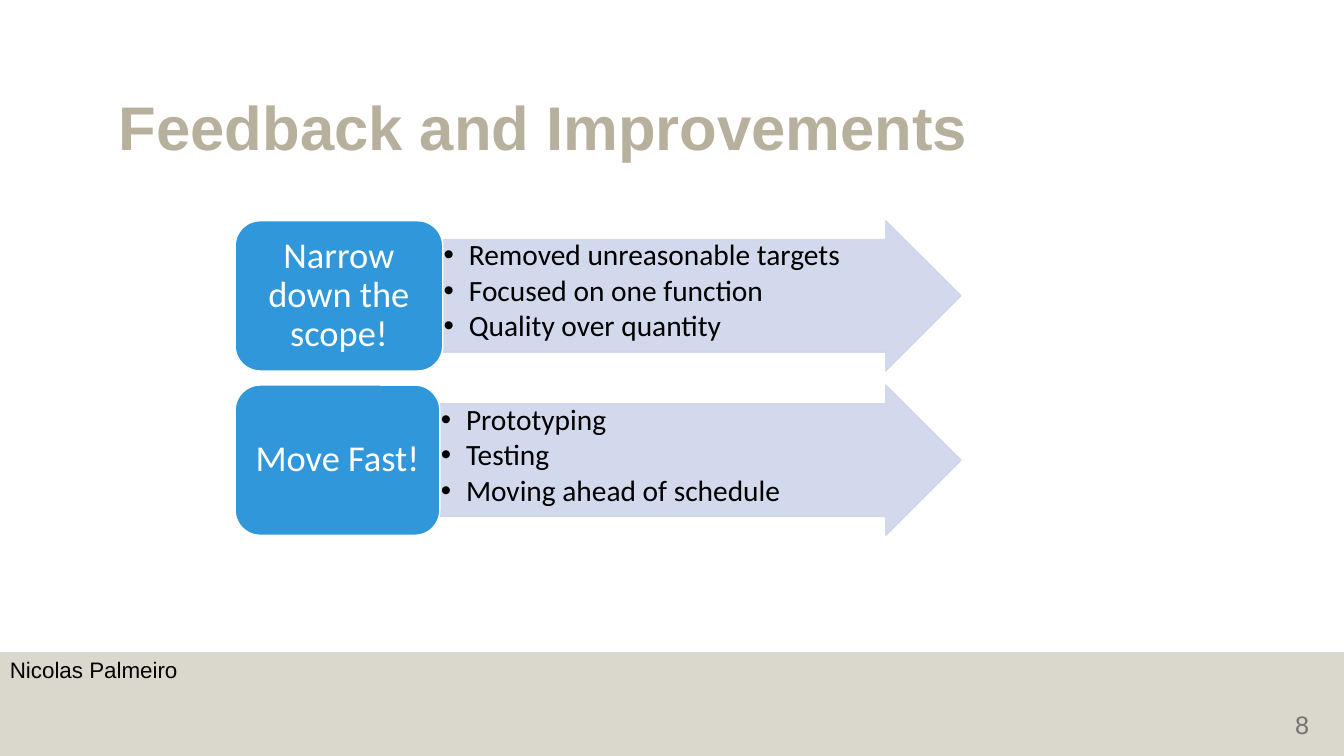
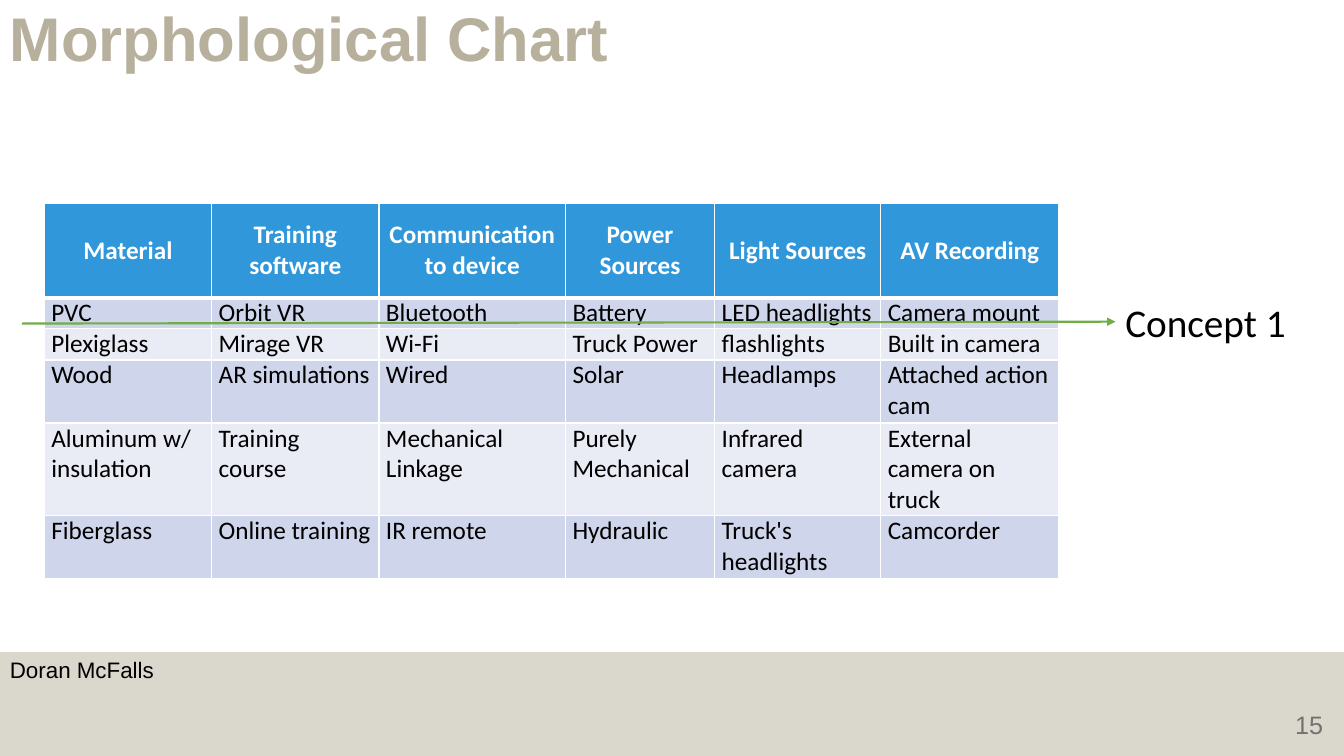
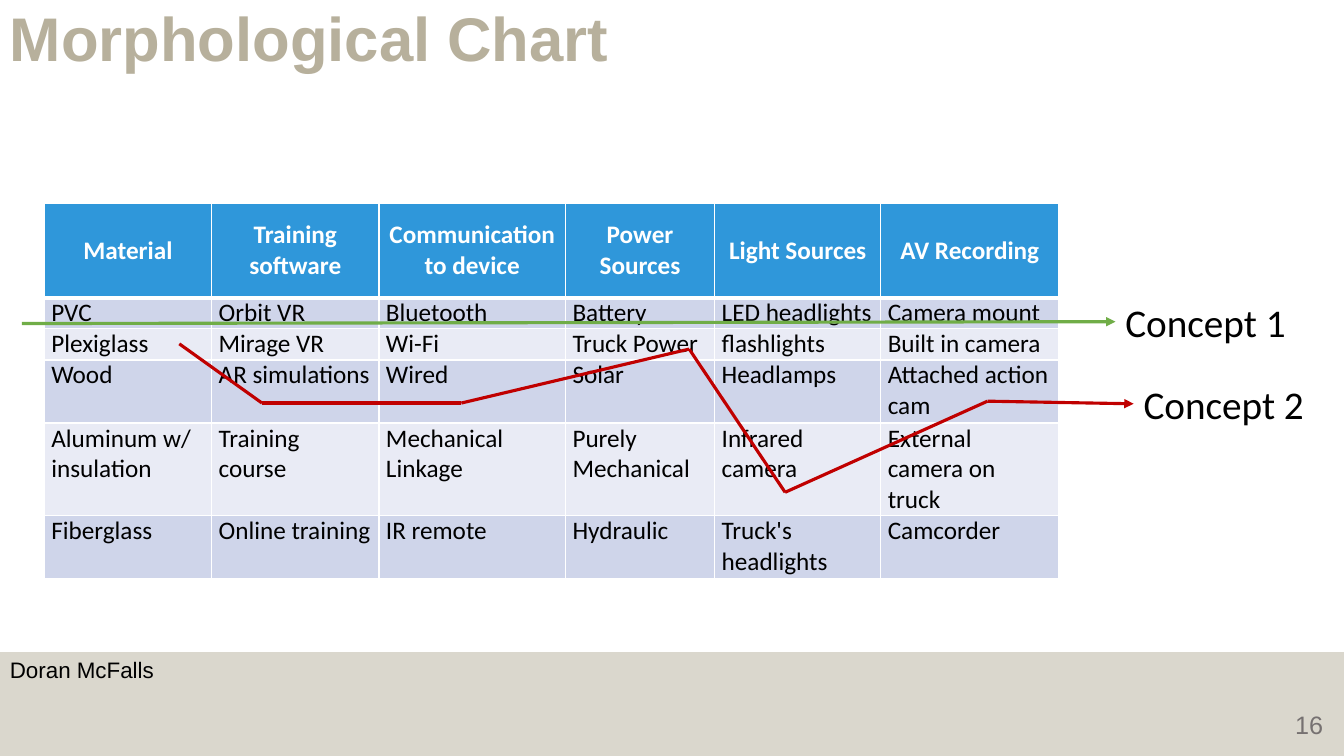
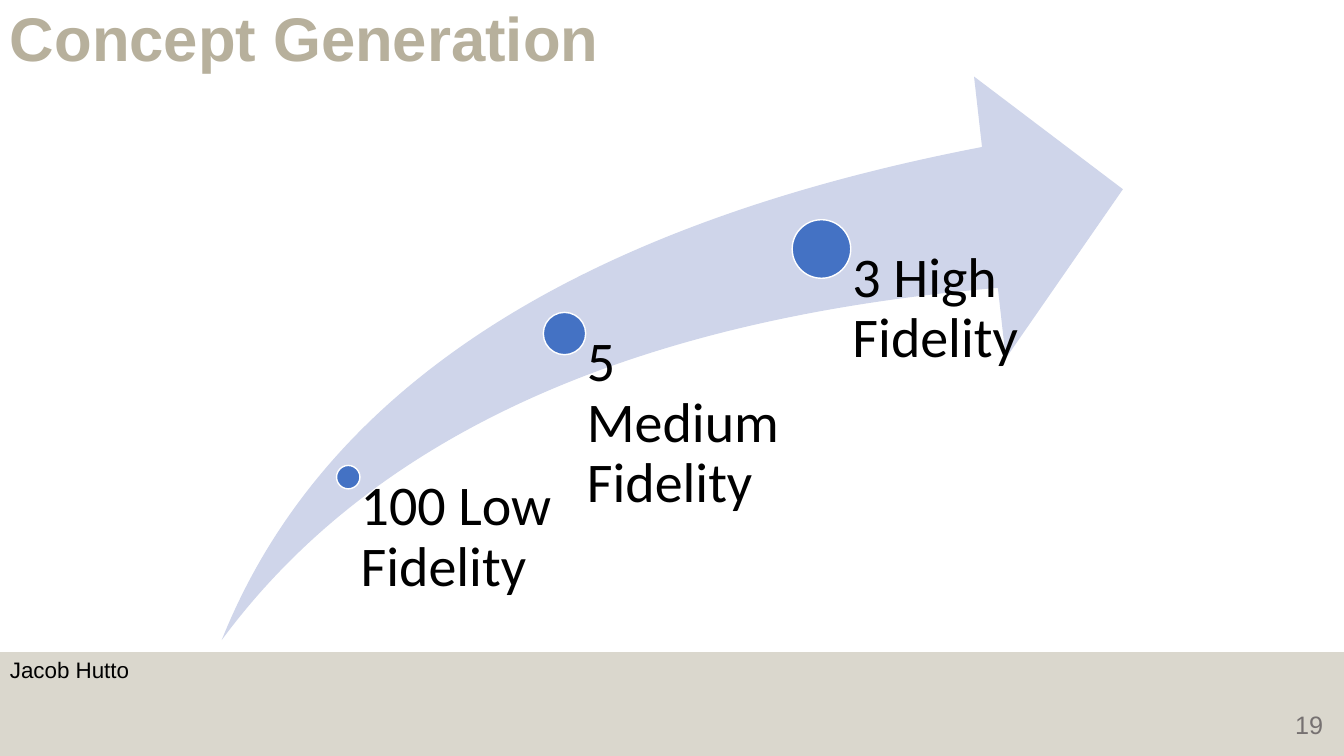
from dataclasses import dataclass

from lxml.etree import SubElement
from pptx import Presentation
from pptx.dml.color import RGBColor
from pptx.enum.shapes import MSO_CONNECTOR as Link, MSO_SHAPE as Form
from pptx.enum.text import MSO_ANCHOR as Anchor, PP_ALIGN as Align
from pptx.oxml.ns import qn
from pptx.util import Inches, Pt

WIDTH, HEIGHT = Inches(13.33), Inches(7.5)


@dataclass(frozen=True)
class Theme:
    sand: str = "B7B09C"
    azure: str = "2F97DA"
    mist: str = "CFD5EA"
    pale: str = "E9EBF5"
    dot: str = "4472C4"
    white: str = "FFFFFF"
    black: str = "000000"
    gray: str = "767171"
    green: str = "70AD47"
    red: str = "C00000"
    heading: str = "Arial"
    body: str = "Calibri"


THEME = Theme()


def style(size, color, name=THEME.body, bold=False, **paragraph):
    font = {"size": Pt(size), "name": name, "bold": bold}
    return {"color": color, "font": font, "paragraph": paragraph}


STYLES = {
    "title": style(44, THEME.sand, THEME.heading, True, line_spacing=0.9),
    "author": style(16, THEME.black, THEME.heading, line_spacing=0.9),
    "number": style(18, THEME.gray, THEME.heading),
    "step": style(26, THEME.white, alignment=Align.CENTER, line_spacing=0.9),
    "bullet": style(21, THEME.black, alignment=Align.LEFT, line_spacing=0.9,
                    space_after=Pt(2.7)),
    "header": style(18, THEME.white, bold=True, alignment=Align.CENTER),
    "cell": style(18, THEME.black),
    "concept": style(28, THEME.black),
    "stage": style(40, THEME.black, line_spacing=0.9),
}


@dataclass(frozen=True)
class Box:
    left: float
    top: float
    width: float
    height: float

    def point(self, x, y):
        return self.left + self.width * x / 100, self.top + self.height * y / 100

    def inner(self, x, y, width, height):
        return Box(*self.point(x, y), self.width * width / 100, self.height * height / 100)

    def emu(self):
        return (*to_emu(self.left, self.top), *to_emu(self.width, self.height))


def to_emu(x, y):
    return int(WIDTH * x / 100), int(HEIGHT * y / 100)


PAGE = Box(0, 0, 100, 100)
BAND = PAGE.inner(0, 86.27, 100, 13.73)
CORNER_TITLE = PAGE.inner(0, 0.13, 52.65, 10.8)
CHART = PAGE.inner(3.3, 26.93, 75.5, 49.6)


def assign(target, values):
    for key, value in values.items():
        setattr(target, key, value)


def write(frame, lines, style_name, bulleted=False, **frame_values):
    assign(frame, {"word_wrap": True, **frame_values})
    look = STYLES[style_name]
    for index, line in enumerate(lines):
        paragraph = frame.add_paragraph() if index else frame.paragraphs[0]
        if bulleted:
            properties = paragraph._p.get_or_add_pPr()
            properties.set("marL", str(Inches(0.25)))
            properties.set("indent", str(-Inches(0.25)))
            SubElement(properties, qn("a:buFont"), typeface=THEME.heading)
            SubElement(properties, qn("a:buChar"), char="•")
        assign(paragraph, look["paragraph"])
        run = paragraph.add_run()
        run.text = line
        assign(run.font, look["font"])
        run.font.color.rgb = RGBColor.from_string(look["color"])


def add_text(slide, box, text, style_name, **frame_values):
    label = slide.shapes.add_textbox(*box.emu())
    write(label.text_frame, [text], style_name, **frame_values)
    return label


def add_form(slide, form, box, fill, line=None, opacity=100, adjustments=()):
    shape = slide.shapes.add_shape(form, *box.emu())
    shape.shadow.inherit = False
    shape.fill.solid()
    shape.fill.fore_color.rgb = RGBColor.from_string(fill)
    if line:
        shape.line.color.rgb = RGBColor.from_string(line)
        shape.line.width = Pt(1)
    else:
        shape.line.fill.background()
    for index, value in enumerate(adjustments):
        shape.adjustments[index] = value
    if opacity < 100:
        for color in shape._element.spPr.iter(qn("a:srgbClr")):
            SubElement(color, qn("a:alpha"), val=str(opacity * 1000))
    return shape


def add_frame(deck, title, author, number, title_box=CORNER_TITLE):
    slide = deck.slides.add_slide(deck.slide_layouts[6])
    add_form(slide, Form.RECTANGLE, BAND, THEME.sand, opacity=50)
    add_text(slide, title_box, title, "title", vertical_anchor=Anchor.MIDDLE)
    add_text(slide, BAND.inner(0, 2, 19.6, 38), author, "author")
    add_text(slide, BAND.inner(95.63, 41.7, 4.37, 56.3), str(number), "number",
             vertical_anchor=Anchor.MIDDLE)
    return slide


def add_steps(slide, box, steps):
    row_height, pitch = 47.76, 52.24
    insets = dict.fromkeys(
        ("margin_left", "margin_top", "margin_right", "margin_bottom"), Inches(0.01))
    for index, (step, label_width, points) in enumerate(steps):
        row = box.inner(0, index * pitch, 100, row_height)
        arrow = add_form(slide, Form.RIGHT_ARROW, row.inner(label_width, 0, 100 - label_width, 100),
                         THEME.mist, THEME.mist, 90, (0.75, 0.5))
        write(arrow.text_frame, points, "bullet", True, vertical_anchor=Anchor.TOP, **insets)
        label = add_form(slide, Form.ROUNDED_RECTANGLE, row.inner(0, 0, label_width, 100),
                         THEME.azure, THEME.white)
        write(label.text_frame, [step], "step", vertical_anchor=Anchor.MIDDLE)


def add_borders(cell, bottom):
    properties = cell._tc.get_or_add_tcPr()
    for side, weight in (("L", 1), ("R", 1), ("T", 1), ("B", bottom)):
        edge = SubElement(properties, qn(f"a:ln{side}"), w=str(Pt(weight)))
        fill = SubElement(edge, qn("a:solidFill"))
        SubElement(fill, qn("a:srgbClr"), val=THEME.white)


def add_options(slide, box, rows, column_shares, row_shares):
    table = slide.shapes.add_table(len(rows), len(rows[0]), *box.emu()).table
    assign(table, {"first_row": False, "horz_banding": False})
    _, _, width, height = box.emu()
    for column, share in zip(table.columns, column_shares):
        column.width = int(width * share / sum(column_shares))
    for row, share in zip(table.rows, row_shares):
        row.height = int(height * share / sum(row_shares))
    for row_index, row in enumerate(rows):
        is_header = row_index == 0
        fill = THEME.azure if is_header else (THEME.pale, THEME.mist)[row_index % 2]
        for column_index, option in enumerate(row):
            cell = table.cell(row_index, column_index)
            add_borders(cell, 3 if is_header else 1)
            cell.fill.solid()
            cell.fill.fore_color.rgb = RGBColor.from_string(fill)
            assign(cell, {
                "margin_left": Inches(0.07), "margin_right": Inches(0.07),
                "margin_top": 0, "margin_bottom": 0,
                "vertical_anchor": Anchor.MIDDLE if is_header else Anchor.TOP,
            })
            write(cell.text_frame, [option], "header" if is_header else "cell")


def add_concept(slide, box, name, color, weight, stops):
    points = [box.point(*stop) for stop in stops]
    end_x, end_y = points[-1]
    label = add_text(slide, Box(end_x, end_y - 3.8, 15.5, 7.6), name, "concept",
                     vertical_anchor=Anchor.MIDDLE)
    for start, end in zip(points, points[1:]):
        leg = slide.shapes.add_connector(Link.STRAIGHT, *to_emu(*start), *to_emu(*end))
        leg.line.color.rgb = RGBColor.from_string(color)
        leg.line.width = Pt(weight)
        SubElement(leg._element.spPr, qn("a:effectLst"))
    leg.end_connect(label, 1)
    SubElement(leg._element.spPr.find(qn("a:ln")), qn("a:tailEnd"), type="triangle")


def add_growth(slide, box, stages):
    add_form(slide, Form.SWOOSH_ARROW, box, THEME.mist, adjustments=(0.25, 0.25))
    for stage, x, y, diameter in stages:
        center_x, center_y = box.point(x, y)
        wide = box.width * diameter / 100
        high = wide * WIDTH / HEIGHT
        add_form(slide, Form.OVAL, Box(center_x - wide / 2, center_y - high / 2, wide, high),
                 THEME.dot, THEME.white)
        add_text(slide, box.inner(x, y, 24, 100 - y), stage, "stage",
                 margin_left=int(WIDTH * wide * 0.53 / 100),
                 margin_top=0, margin_right=0, margin_bottom=0)


STEPS = [
    ("Narrow down the scope!", 28.6,
     ["Removed unreasonable targets", "Focused on one function", "Quality over quantity"]),
    ("Move Fast!", 28.2, ["Prototyping", "Testing", "Moving ahead of schedule"]),
]
OPTIONS = [
    ["Material", "Training software", "Communication to device", "Power Sources",
     "Light Sources", "AV Recording"],
    ["PVC", "Orbit VR", "Bluetooth", "Battery", "LED headlights", "Camera mount"],
    ["Plexiglass", "Mirage VR", "Wi-Fi", "Truck Power", "flashlights", "Built in camera"],
    ["Wood", "AR simulations", "Wired", "Solar", "Headlamps", "Attached action cam"],
    ["Aluminum w/ insulation", "Training course", "Mechanical Linkage", "Purely Mechanical",
     "Infrared camera", "External camera on truck"],
    ["Fiberglass", "Online training", "IR remote", "Hydraulic", "Truck's headlights",
     "Camcorder"],
]
COLUMN_SHARES = [12.45, 12.45, 13.88, 11.1, 12.36, 13.26]
ROW_SHARES = [0.94, 0.31, 0.31, 0.63, 0.92, 0.63]
CONCEPT_1 = ("Concept 1", THEME.green, [(-2.2, 32), (105.56, 31.5)])
CONCEPT_2 = ("Concept 2", THEME.red, [
    (13.3, 37.4), (21.45, 53.2), (41.1, 53.2), (63.55, 38.8),
    (73, 77), (92.95, 52.7), (107.35, 53.4)])
CHART_PAGES = [(15, 1.5, [CONCEPT_1]), (16, 2.25, [CONCEPT_1, CONCEPT_2])]
STAGES = [
    ("100 Low Fidelity", 14.04, 71.1, 2.6),
    ("5 Medium Fidelity", 38.03, 45.6, 4.7),
    ("3 High Fidelity", 66.55, 30.6, 6.5),
]


def main():
    deck = Presentation()
    assign(deck, {"slide_width": WIDTH, "slide_height": HEIGHT})

    feedback = add_frame(deck, "Feedback and Improvements", "Nicolas Palmeiro", 8,
                         PAGE.inner(8.1, 7.6, 86.25, 19.33))
    add_steps(feedback, PAGE.inner(17.5, 29.2, 54, 41.6), STEPS)

    for number, weight, concepts in CHART_PAGES:
        chart = add_frame(deck, "Morphological Chart", "Doran McFalls", number)
        add_options(chart, CHART, OPTIONS, COLUMN_SHARES, ROW_SHARES)
        for name, color, stops in concepts:
            add_concept(chart, CHART, name, color, weight, stops)

    generation = add_frame(deck, "Concept Generation", "Jacob Hutto", 19)
    add_growth(generation, PAGE.inner(16.5, 10.13, 67.05, 74.53), STAGES)

    deck.save("out.pptx")


if __name__ == "__main__":
    main()
